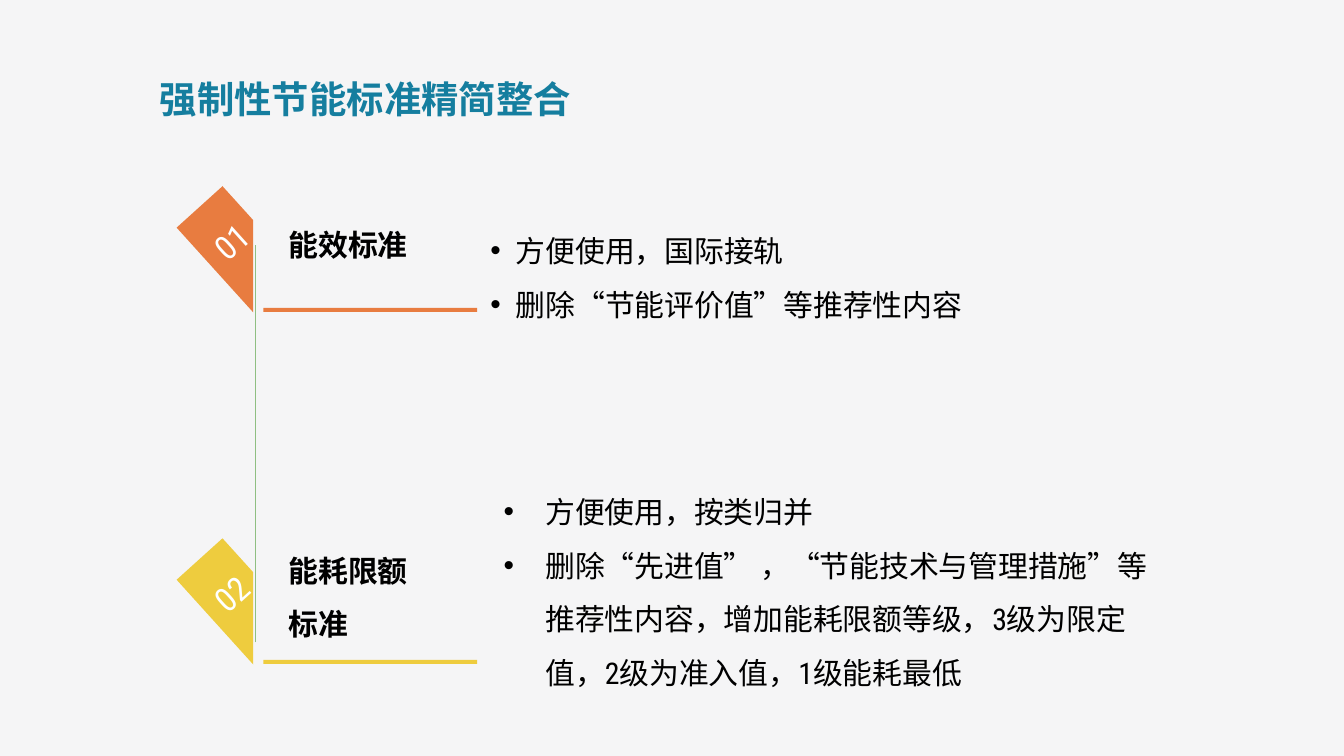
from lxml import etree
from pptx import Presentation
from pptx import util as u
from pptx.dml.color import RGBColor
from pptx.enum import shapes, text
from pptx.oxml import ns

Inches = u.Inches
FONT = "Roboto Condensed"
COLORS = {
    "background": "F5F5F6",
    "title": "157E9F",
    "body": "000000",
    "number": "FEFFFF",
    "spine": "8FBF82",
    "orange": "E87C40",
    "yellow": "EECC3E",
}
ITEM_LEFT, ITEM_TOP, ITEM_PITCH = 1.54, 1.43, 2.62
# Each bullet box: left and top offsets from the item, width, height, indent
ITEMS = [
    ("01", "能效标准", "orange", (2.01, 0.12, 6.27, 0.85, 0.19),
     ["方便使用，国际接轨", "删除“节能评价值”等推荐性内容"]),
    ("02", "能耗限额标准", "yellow", (2.11, -0.56, 5, 1.66, 0.31),
     ["方便使用，按类归并",
      "删除“先进值” ，“节能技术与管理措施”等推荐性内容，增加能耗限额等级，"
      "3级为限定值，2级为准入值，1级能耗最低"]),
]


def color(name):
    return RGBColor.from_string(COLORS[name])


def fill_plain(shape, color_name):
    shape.shadow.inherit = False
    shape.fill.solid()
    shape.fill.fore_color.rgb = color(color_name)
    shape.line.fill.background()


def format_paragraph(paragraph, size, color_name, bold=False, align=text.PP_ALIGN.LEFT):
    paragraph.alignment = align
    paragraph.line_spacing = 1.5
    for run in paragraph.runs:
        run.font.name = FONT
        run.font.size = u.Pt(size)
        run.font.bold = bold
        run.font.color.rgb = color(color_name)


def add_bullet(paragraph, indent):
    properties = paragraph._p.get_or_add_pPr()
    properties.set("marL", str(Inches(indent)))
    properties.set("indent", str(-Inches(indent)))
    etree.SubElement(properties, ns.qn("a:buFont")).set("typeface", "Arial")
    etree.SubElement(properties, ns.qn("a:buChar")).set("char", "•")


def add_title(slide, left, top, width, height):
    title = slide.shapes.title
    title.left, title.top = Inches(left), Inches(top)
    title.width, title.height = Inches(width), Inches(height)
    frame = title.text_frame
    frame.text = "强制性节能标准精简整合"
    frame.auto_size = text.MSO_AUTO_SIZE.NONE
    frame.vertical_anchor = text.MSO_ANCHOR.MIDDLE
    format_paragraph(frame.paragraphs[0], 20, "title", True, text.PP_ALIGN.CENTER)


def add_spine(slide, x, top, bottom):
    spine = slide.shapes.add_connector(
        shapes.MSO_CONNECTOR.STRAIGHT, Inches(x), Inches(bottom), Inches(x), Inches(top))
    spine.line.color.rgb = color("spine")
    spine.line.width = u.Pt(0.75)
    etree.SubElement(spine._element.spPr, ns.qn("a:effectLst"))


def add_number_flag(slide, left, top, number, color_name):
    """Add the tilted four-sided tag that carries the item number."""
    width, height, shoulder = 0.46, 0.85, 0.34
    builder = slide.shapes.build_freeform(0, 0)
    builder.add_line_segments(
        [(Inches(width), 0), (Inches(width), Inches(shoulder)), (0, Inches(height))])
    flag = builder.convert_to_shape(Inches(left), Inches(top))
    flag.rotation = 317.9
    fill_plain(flag, color_name)
    frame = flag.text_frame
    frame.text = number
    frame.margin_left = frame.margin_right = 0
    frame.vertical_anchor = text.MSO_ANCHOR.TOP
    format_paragraph(frame.paragraphs[0], 18, "number", align=text.PP_ALIGN.CENTER)


def add_underline(slide, left, top, color_name):
    """Add an upright bar turned on its side."""
    underline = slide.shapes.add_shape(
        shapes.MSO_SHAPE.RECTANGLE,
        Inches(left), Inches(top), Inches(0.03), Inches(1.59))
    underline.rotation = 270
    fill_plain(underline, color_name)


def add_label(slide, left, top, label):
    box = slide.shapes.add_textbox(Inches(left), Inches(top), Inches(1.23), Inches(1.59))
    frame = box.text_frame
    frame.word_wrap = True
    frame.vertical_anchor = text.MSO_ANCHOR.MIDDLE
    frame.text = label
    format_paragraph(frame.paragraphs[0], 16, "body", bold=True)


def add_bullets(slide, left, top, width, height, indent, lines):
    box = slide.shapes.add_textbox(
        Inches(left), Inches(top), Inches(width), Inches(height))
    frame = box.text_frame
    frame.word_wrap = True
    frame.auto_size = text.MSO_AUTO_SIZE.SHAPE_TO_FIT_TEXT
    frame.text = "\n".join(lines)
    for paragraph in frame.paragraphs:
        format_paragraph(paragraph, 16, "body")
        add_bullet(paragraph, indent)


def add_item(slide, left, top, number, label, color_name, bullet_box, lines):
    add_number_flag(slide, left, top, number, color_name)
    add_underline(slide, left + 1.2, top + 0.08, color_name)
    add_label(slide, left + 0.51, top - 0.47, label)
    dx, dy, width, height, indent = bullet_box
    add_bullets(slide, left + dx, top + dy, width, height, indent, lines)


def main():
    presentation = Presentation()
    presentation.slide_width = Inches(10)
    presentation.slide_height = Inches(10 * 9 / 16)
    slide = presentation.slides.add_slide(presentation.slide_layouts[5])
    slide.background.fill.solid()
    slide.background.fill.fore_color.rgb = color("background")
    add_title(slide, 0.27, 0.18, 4.9, 0.94)
    add_spine(slide, 1.9, 1.82, 4.78)
    for index, item in enumerate(ITEMS):
        add_item(slide, ITEM_LEFT, ITEM_TOP + index * ITEM_PITCH, *item)
    presentation.save("out.pptx")


if __name__ == "__main__":
    main()
